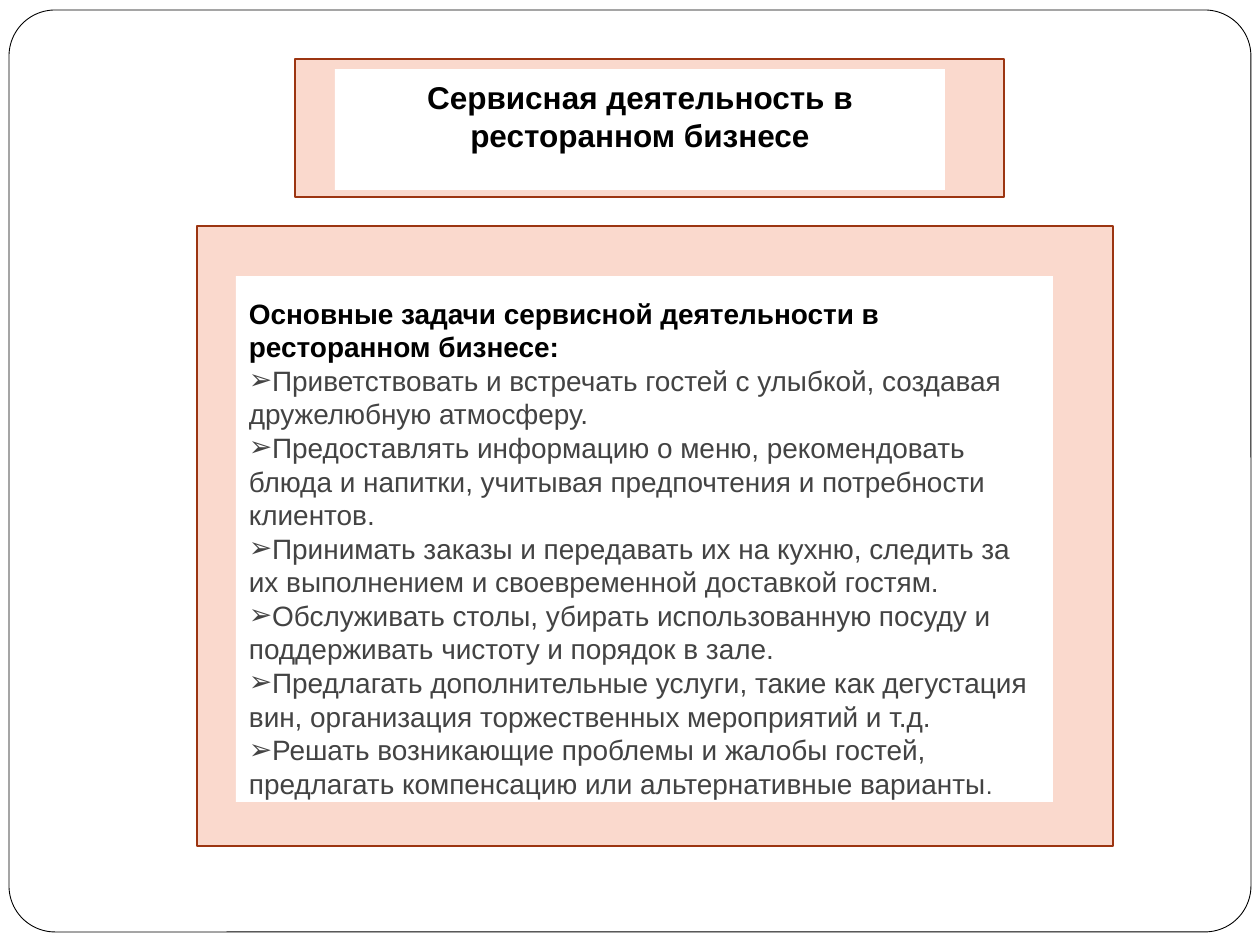
from lxml.etree import SubElement
from pptx import Presentation
from pptx.dml.color import RGBColor
from pptx.enum.shapes import MSO_SHAPE
from pptx.enum.text import MSO_ANCHOR, PP_ALIGN
from pptx.oxml.ns import qn
from pptx.util import Pt

PX = 914400 / 126
WHITE = RGBColor(0xFF, 0xFF, 0xFF)
BLACK = RGBColor(0x00, 0x00, 0x00)
GRAY = RGBColor(0x43, 0x43, 0x43)
PEACH = RGBColor(0xFA, 0xD9, 0xCD)
RUST = RGBColor(0x9C, 0x35, 0x11)

TITLE = "Сервисная деятельность в ресторанном бизнесе"
HEADING = "Основные задачи сервисной деятельности в ресторанном бизнесе:"
TASKS = [
    "Приветствовать и встречать гостей с улыбкой, создавая дружелюбную атмосферу.",
    "Предоставлять информацию о меню, рекомендовать блюда и напитки, учитывая "
    "предпочтения и потребности клиентов.",
    "Принимать заказы и передавать их на кухню, следить за их выполнением и "
    "своевременной доставкой гостям.",
    "Обслуживать столы, убирать использованную посуду и поддерживать чистоту и "
    "порядок в зале.",
    "Предлагать дополнительные услуги, такие как дегустация вин, организация "
    "торжественных мероприятий и т.д.",
    "Решать возникающие проблемы и жалобы гостей, предлагать компенсацию или "
    "альтернативные варианты",
]


def px(n):
    return round(n * PX)


class Deck:
    font = "Arial"

    def __init__(self, prs):
        self.s = prs.slides.add_slide(prs.slide_layouts[6])

    def box(self, x, y, w, h, fill, line=None, weight=1, kind=MSO_SHAPE.RECTANGLE):
        sp = self.s.shapes.add_shape(kind, px(x), px(y), px(w), px(h))
        sp.shadow.inherit = False
        sp.fill.solid()
        sp.fill.fore_color.rgb = fill
        if line is None:
            sp.line.fill.background()
        else:
            sp.line.color.rgb = line
            sp.line.width = Pt(weight)
        return sp

    def frame(self, sp, top, anchor):
        tf = sp.text_frame
        fmt = {
            "word_wrap": True,
            "vertical_anchor": anchor,
            "margin_left": px(13),
            "margin_right": px(13),
            "margin_top": px(top),
            "margin_bottom": 0,
        }
        for name, value in fmt.items():
            setattr(tf, name, value)
        return tf

    def run(self, p, text, size, color, bold=False):
        r = p.add_run()
        r.text = text
        fmt = {"name": self.font, "size": Pt(size), "bold": bold}
        for name, value in fmt.items():
            setattr(r.font, name, value)
        r.font.color.rgb = color

    def bullet(self, tf, text):
        p = tf.add_paragraph()
        p.alignment = PP_ALIGN.LEFT
        pPr = p._p.get_or_add_pPr()
        SubElement(pPr, qn("a:buFont"), typeface=self.font)
        SubElement(pPr, qn("a:buChar"), char="➢")
        self.run(p, text, 16, GRAY)
        return p


def main():
    prs = Presentation()
    prs.slide_width, prs.slide_height = px(1260), px(945)
    deck = Deck(prs)

    border = deck.box(9, 10, 1242, 922, WHITE, BLACK, 0.5, MSO_SHAPE.ROUNDED_RECTANGLE)
    border.adjustments[0] = 0.05

    deck.box(295, 59, 709, 138, PEACH, RUST)
    sp = deck.box(335, 69, 610, 121, WHITE)
    tf = deck.frame(sp, 9, MSO_ANCHOR.TOP)
    p = tf.paragraphs[0]
    p.alignment = PP_ALIGN.CENTER
    deck.run(p, TITLE, 18, BLACK, True)

    deck.box(197, 226, 916, 620, PEACH, RUST)
    sp = deck.box(236, 276, 817, 526, WHITE)
    tf = deck.frame(sp, 18, MSO_ANCHOR.MIDDLE)
    p = tf.paragraphs[0]
    p.alignment = PP_ALIGN.LEFT
    deck.run(p, HEADING, 16, BLACK, True)
    for task in TASKS:
        p = deck.bullet(tf, task)
    deck.run(p, ".", 14, GRAY)

    prs.save("out.pptx")


if __name__ == "__main__":
    main()
